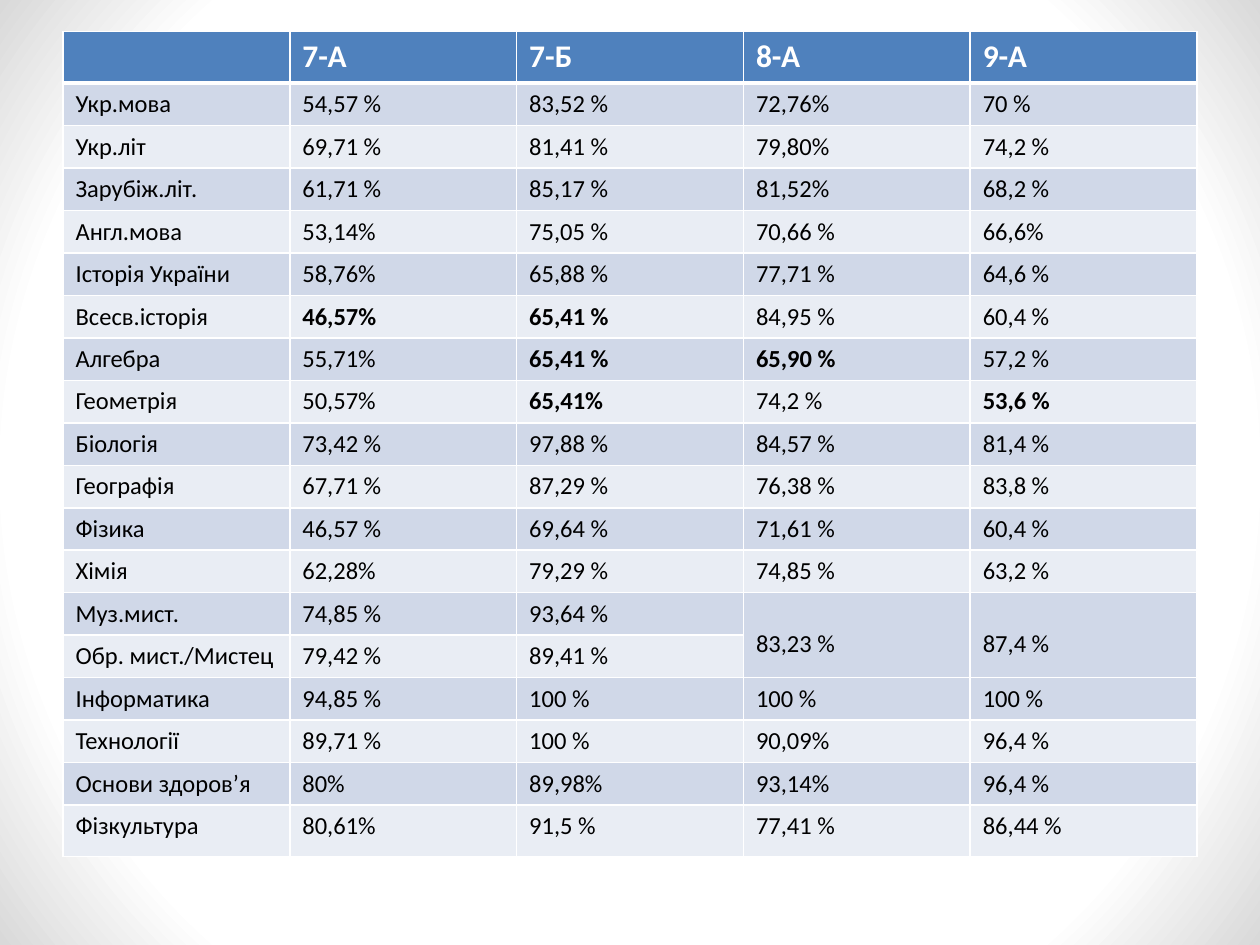
from dataclasses import dataclass

from lxml import etree
from pptx import Presentation, util as u
from pptx.dml.color import RGBColor
from pptx.enum import shapes
from pptx.oxml import ns


@dataclass(frozen=True)
class Theme:
    font: str = "Calibri"
    head: int = 18
    body: int = 14
    white: str = "FFFFFF"
    black: str = "000000"
    edge: str = "D9D9D9"
    blue: str = "4F81BD"
    bands: tuple = ("D0D8E8", "E9EDF4")
    thin: int = 1
    thick: int = 3


def rgb(code):
    return RGBColor.from_string(code)


class Deck:
    def __init__(self, theme):
        self.theme = theme
        self.prs = Presentation()
        self.prs.slide_width, self.prs.slide_height = u.Inches(10), u.Inches(7.5)
        self.slide = self.prs.slides.add_slide(self.prs.slide_layouts[6])

    def share(self, x, y):
        return int(self.prs.slide_width * x), int(self.prs.slide_height * y)

    def glow(self):
        """Full-slide rectangle, white in the middle and grey at the corners."""
        box = self.slide.shapes.add_shape(
            shapes.MSO_SHAPE.RECTANGLE, 0, 0, *self.share(1, 1))
        box.shadow.inherit = False
        box.line.fill.background()
        box.fill.gradient()
        looks = ((0.79, self.theme.white), (1, self.theme.edge))
        for stop, (pos, code) in zip(box.fill.gradient_stops, looks):
            stop.position, stop.color.rgb = pos, rgb(code)
        lin = box.element.spPr.find(".//" + ns.qn("a:lin"))
        ring = etree.Element(ns.qn("a:path"), {"path": "circle"})
        etree.SubElement(ring, ns.qn("a:fillToRect"),
                         {side: "50000" for side in "ltrb"})
        lin.getparent().replace(lin, ring)

    def edges(self, cell, top, low):
        props = cell._tc.get_or_add_tcPr()
        thin = self.theme.thin
        for side, width in zip("LRTB", (thin, thin, top, low)):
            line = etree.SubElement(props, ns.qn("a:ln" + side),
                                    {"w": str(u.Pt(width))})
            fill = etree.SubElement(line, ns.qn("a:solidFill"))
            etree.SubElement(fill, ns.qn("a:srgbClr"), {"val": self.theme.white})

    def cell(self, cell, words, row):
        """One cell; a leading * makes its words bold."""
        t = self.theme
        head = row == 0
        self.edges(cell, t.thick if row == 1 else t.thin,
                   t.thick if head else t.thin)
        cell.fill.solid()
        cell.fill.fore_color.rgb = rgb(t.blue if head else t.bands[(row - 1) % 2])
        if words:
            run = cell.text_frame.paragraphs[0].add_run()
            run.text = words.lstrip("*")
            font = run.font
            font.name, font.size = t.font, u.Pt(t.head if head else t.body)
            font.bold = head or words.startswith("*")
            font.color.rgb = rgb(t.white if head else t.black)

    def table(self, rows, x, y, wide, heights):
        left, top = self.share(x, y)
        width, _ = self.share(wide, 0)
        grid = self.slide.shapes.add_table(
            len(rows), len(rows[0]), left, top, width,
            u.Inches(sum(heights))).table
        for r, (line, high) in enumerate(zip(rows, heights)):
            grid.rows[r].height = u.Inches(high)
            for c, words in enumerate(line):
                self.cell(grid.cell(r, c), words, r)
        return grid

    def join(self, grid, row, col):
        """Merge a cell with the one below, its words on the second line."""
        cell = grid.cell(row, col)
        cell.merge(grid.cell(row + 1, col))
        cell.margin_top = u.Inches(0.29)

    def save(self):
        self.prs.save("out.pptx")


MARKS = [
    ("", "7-А", "7-Б", "8-А", "9-А"),
    ("Укр.мова", "54,57 %", "83,52 %", "72,76%", "70 %"),
    ("Укр.літ", "69,71 %", "81,41 %", "79,80%", "74,2 %"),
    ("Зарубіж.літ.", "61,71 %", "85,17 %", "81,52%", "68,2 %"),
    ("Англ.мова", "53,14%", "75,05 %", "70,66 %", "66,6%"),
    ("Історія України", "58,76%", "65,88 %", "77,71 %", "64,6 %"),
    ("Всесв.історія", "*46,57%", "*65,41 %", "84,95 %", "60,4 %"),
    ("Алгебра", "55,71%", "*65,41 %", "*65,90 %", "57,2 %"),
    ("Геометрія", "50,57%", "*65,41%", "74,2 %", "*53,6 %"),
    ("Біологія", "73,42 %", "97,88 %", "84,57 %", "81,4 %"),
    ("Географія", "67,71 %", "87,29 %", "76,38 %", "83,8 %"),
    ("Фізика", "46,57 %", "69,64 %", "71,61 %", "60,4 %"),
    ("Хімія", "62,28%", "79,29 %", "74,85 %", "63,2 %"),
    ("Муз.мист.", "74,85 %", "93,64 %", "83,23 %", "87,4 %"),
    ("Обр. мист./Мистец", "79,42 %", "89,41 %", "", ""),
    ("Інформатика", "94,85 %", "100 %", "100 %", "100 %"),
    ("Технології", "89,71 %", "100 %", "90,09%", "96,4 %"),
    ("Основи здоров’я", "80%", "89,98%", "93,14%", "96,4 %"),
    ("Фізкультура", "80,61%", "91,5 %", "77,41 %", "86,44 %"),
]


def main():
    deck = Deck(Theme())

    # Backdrop
    deck.glow()

    # Marks by subject and class; first and last rows are taller
    heights = [0.41] + [0.33] * (len(MARKS) - 2) + [0.41]
    grid = deck.table(MARKS, 0.05, 1 / 30, 0.9, heights)

    # Classes with one shared arts mark
    arts = [line[0] for line in MARKS].index("Муз.мист.")
    for col in (3, 4):
        deck.join(grid, arts, col)

    deck.save()


if __name__ == "__main__":
    main()
